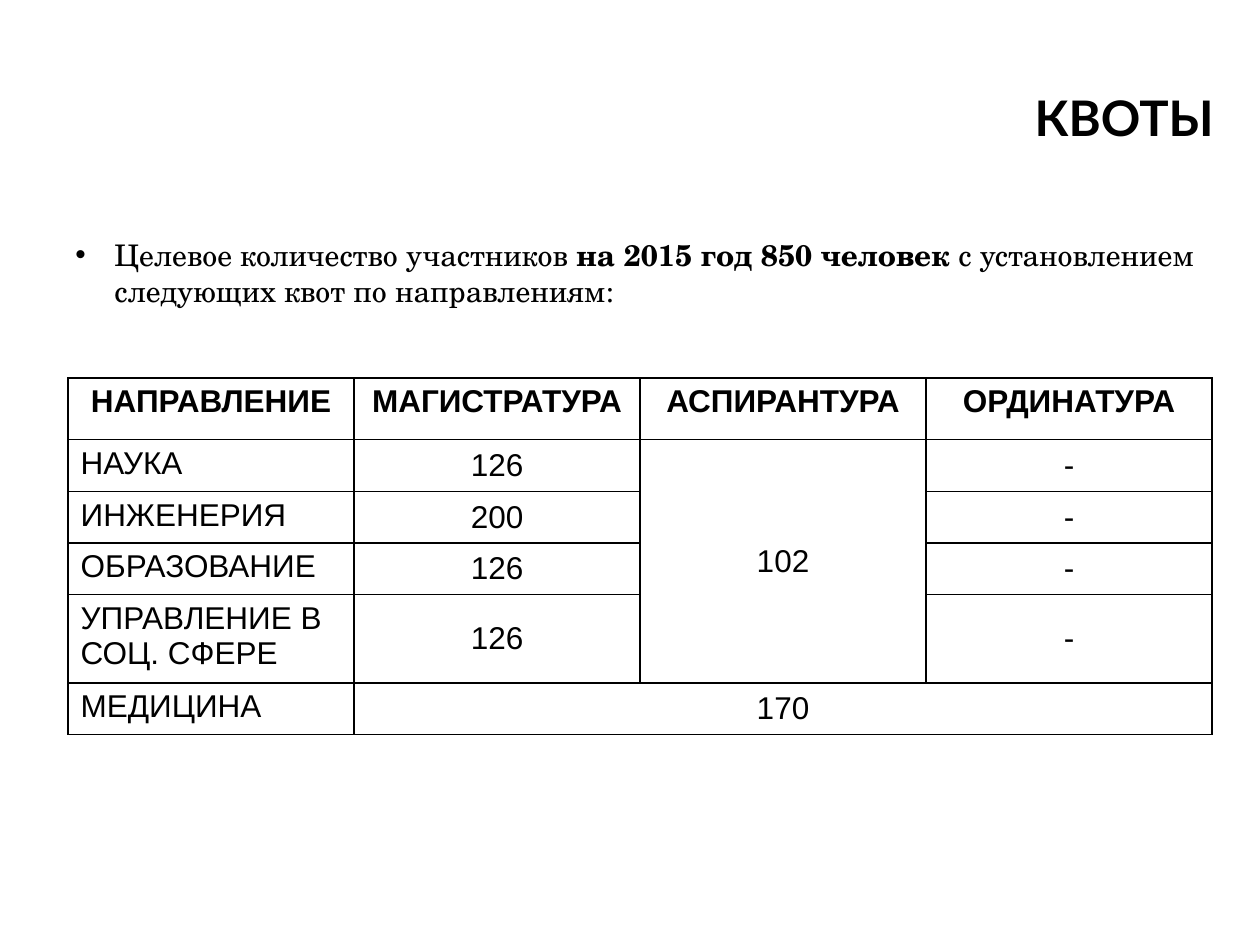
import lxml.etree
import pptx
import pptx.dml.color
import pptx.enum.text
import pptx.oxml.ns
import pptx.util

Inches = pptx.util.Inches
Pt = pptx.util.Pt
Align = pptx.enum.text.PP_ALIGN
Anchor = pptx.enum.text.MSO_ANCHOR
qn = pptx.oxml.ns.qn

QUOTAS = [
    ["НАПРАВЛЕНИЕ", "МАГИСТРАТУРА", "АСПИРАНТУРА", "ОРДИНАТУРА"],
    ["НАУКА", "126", "102", "-"],
    ["ИНЖЕНЕРИЯ", "200", "", "-"],
    ["ОБРАЗОВАНИЕ", "126", "", "-"],
    ["УПРАВЛЕНИЕ В СОЦ. СФЕРЕ", "126", "", "-"],
    ["МЕДИЦИНА", "170", "", ""],
]


def color(value):
    return pptx.dml.color.RGBColor.from_string(value)


def write(paragraph, text, font="Arial", size=18, bold=False, ink="000000", align=Align.LEFT):
    paragraph.alignment = align
    run = paragraph.add_run()
    run.text = text
    run.font.name = font
    run.font.size = Pt(size)
    run.font.bold = bold
    run.font.color.rgb = color(ink)


class QuotaSlide:
    ink = "000000"
    border_width = 1

    def __init__(self, deck):
        self.slide = deck.slides.add_slide(deck.slide_layouts[6])

    def text_box(self, left, top, width, height, anchor=Anchor.TOP):
        box = self.slide.shapes.add_textbox(*map(Inches, (left, top, width, height)))
        frame = box.text_frame
        frame.word_wrap = True
        frame.vertical_anchor = anchor
        return frame.paragraphs[0]

    def title(self, text, *place):
        heading = self.text_box(*place, anchor=Anchor.MIDDLE)
        write(heading, text, font="Lato", size=28, bold=True, ink=self.ink, align=Align.RIGHT)

    def bullet(self, parts, *place):
        target = self.text_box(*place)
        properties = target._p.get_or_add_pPr()
        properties.set("marL", str(Inches(0.31)))
        properties.set("indent", str(Inches(-0.31)))
        lxml.etree.SubElement(properties, qn("a:buFont"), typeface="Arial")
        lxml.etree.SubElement(properties, qn("a:buChar"), char="•")
        target.space_after = Pt(6)
        for text, bold in parts:
            write(target, text, font="TeX Gyre Schola", size=17, bold=bold, ink=self.ink)

    def border(self, cell):
        properties = cell._tc.get_or_add_tcPr()
        for side in ("lnL", "lnR", "lnT", "lnB"):
            line = lxml.etree.SubElement(properties, qn(f"a:{side}"), w=str(Pt(self.border_width)))
            fill = lxml.etree.SubElement(line, qn("a:solidFill"))
            lxml.etree.SubElement(fill, qn("a:srgbClr"), val=self.ink)

    def table(self, rows, heights, merges, *place):
        frame = self.slide.shapes.add_table(len(rows), len(rows[0]), *map(Inches, place))
        quotas = frame.table
        quotas.first_row = quotas.horz_banding = False
        for row, height in zip(quotas.rows, heights):
            row.height = Inches(height)
        for r, texts in enumerate(rows):
            for c, text in enumerate(texts):
                cell = quotas.cell(r, c)
                self.border(cell)
                cell.fill.background()
                cell.vertical_anchor = Anchor.MIDDLE if r and c else Anchor.TOP
                if text:
                    align = Align.LEFT if r and not c else Align.CENTER
                    write(cell.text_frame.paragraphs[0], text, bold=r == 0, ink=self.ink, align=align)
        for first, last in merges:
            quotas.cell(*first).merge(quotas.cell(*last))


def main():
    deck = pptx.Presentation()
    deck.slide_width = Inches(10)
    deck.slide_height = Inches(7.5)
    page = QuotaSlide(deck)
    page.title("КВОТЫ", 2.25, 0.62, 7.48, 0.61)
    target = [
        ("Целевое количество участников ", False),
        ("на 2015 год 850 человек ", True),
        ("с установлением следующих квот по направлениям:", False),
    ]
    page.bullet(target, 0.5, 1.83, 9.17, 0.67)
    heights = [0.49] + [0.41] * 5
    merges = [((1, 2), (4, 2)), ((5, 1), (5, 3))]
    page.table(QUOTAS, heights, merges, 0.54, 3, 9.08, sum(heights))
    deck.save("out.pptx")


if __name__ == "__main__":
    main()
